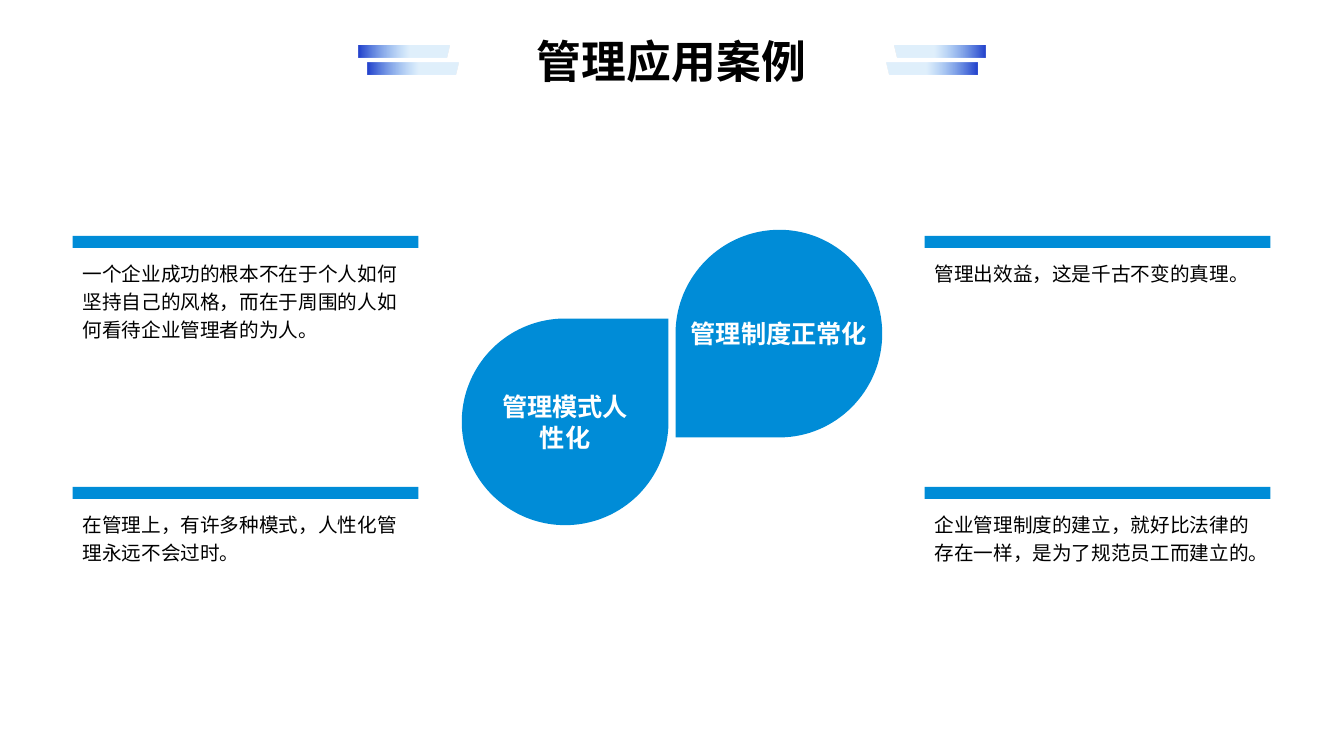
"""Build the management case slide with two drops and four notes."""
from dataclasses import dataclass

from lxml.etree import SubElement
from pptx import Presentation
from pptx.dml.color import RGBColor
from pptx.enum.shapes import MSO_SHAPE as Kind
from pptx.enum.text import MSO_ANCHOR as Anchor, MSO_AUTO_SIZE as Fit, PP_ALIGN as Align
from pptx.oxml.ns import qn
from pptx.shapes.autoshape import Shape
from pptx.shapes.shapetree import SlideShapes as Shapes
from pptx.text.text import TextFrame as Frame
from pptx.util import Inches, Pt

BLUE = RGBColor(0x00, 0x8C, 0xD7)
NAVY = RGBColor(0x21, 0x40, 0xCC)
SKY = RGBColor(0x63, 0xB0, 0xF1)
BLACK = RGBColor(0, 0, 0)
WHITE = RGBColor(255, 255, 255)
BEND = 0.55

Point = tuple[float, float]


@dataclass
class Note:
    left: float
    top: float
    text: str


@dataclass
class Stripe:
    outer: float
    top: float
    way: int


NOTES = [
    Note(0.72, 2.34, "一个企业成功的根本不在于个人如何坚持自己的风格，而在于周围的人如何看待企业管理者的为人。"),
    Note(0.72, 4.83, "在管理上，有许多种模式，人性化管理永远不会过时。"),
    Note(9.17, 2.34, "管理出效益，这是千古不变的真理。"),
    Note(9.17, 4.83, "企业管理制度的建立，就好比法律的存在一样，是为了规范员工而建立的。"),
]
STRIPES = [
    Stripe(3.56, 0.45, 1),
    Stripe(3.65, 0.62, 1),
    Stripe(9.77, 0.45, -1),
    Stripe(9.69, 0.62, -1),
]


def write(frame: Frame, text: str, size: int, color: RGBColor, bold: bool = False,
          align: Align = Align.CENTER, space: float = 1.0) -> None:
    frame.word_wrap = True
    para = frame.paragraphs[0]
    para.alignment = align
    para.line_spacing = space
    run = para.add_run()
    run.text = text
    font = run.font
    font.name, font.size, font.bold = "Arial", Pt(size), bold
    font.color.rgb = color


def paint(shape: Shape) -> None:
    shape.shadow.inherit = False
    shape.fill.solid()
    shape.fill.fore_color.rgb = BLUE
    shape.line.fill.background()


def outline(shapes: Shapes, points: list[Point], close: bool = True) -> Shape:
    spots = [(Inches(x), Inches(y)) for x, y in points]
    form = shapes.build_freeform(*spots[0])
    form.add_line_segments(spots[1:], close=close)
    return form.convert_to_shape()


def toward(start: Point, goal: Point) -> Point:
    return tuple(a + BEND * (b - a) for a, b in zip(start, goal))


def curve(shape: Shape) -> None:
    lines = list(shape._element.iter(qn("a:lnTo")))
    for first, second, third in zip(lines[::3], lines[1::3], lines[2::3]):
        first.tag = qn("a:cubicBezTo")
        for line in (second, third):
            first.append(line[0])
            line.getparent().remove(line)


def label(drop: Shape, text: str) -> None:
    paint(drop)
    drop.text_frame.vertical_anchor = Anchor.MIDDLE
    write(drop.text_frame, text, 18, WHITE, True)


def add_drops(shapes: Shapes) -> None:
    left, mid, right = 6.7, 7.73, 8.75
    top, half, low = 2.28, 3.31, 4.34
    nodes = [(right, half), (mid, low), (left, low), (left, half), (mid, top), (right, half)]
    pulls = [(right, low), (mid, low), (left, low), (left, top), (right, top)]
    points = nodes[:1]
    for start, end, pull in zip(nodes, nodes[1:], pulls):
        points += [toward(start, pull), toward(end, pull), end]
    drop = outline(shapes, points, False)
    curve(drop)
    label(drop, "管理制度正常化")
    tear = shapes.add_shape(Kind.TEAR, Inches(4.58), Inches(3.16), Inches(2.05), Inches(2.05))
    label(tear, "管理模式人性化")


def add_note(shapes: Shapes, note: Note) -> None:
    left, wide = Inches(note.left), Inches(3.43)
    box = shapes.add_textbox(left, Inches(note.top + 0.16), wide, Inches(0.97))
    write(box.text_frame, note.text, 14, BLACK, align=Align.LEFT, space=1.2)
    paint(shapes.add_shape(Kind.RECTANGLE, left, Inches(note.top), wide, Inches(0.12)))


def add_stripe(shapes: Shapes, stripe: Stripe) -> None:
    start, top, low = stripe.outer, stripe.top, stripe.top + 0.12
    end, slant = start + stripe.way * 0.9, start + stripe.way * 0.87
    bar = outline(shapes, [(start, top), (end, top), (slant, low), (start, low)])
    paint(bar)
    bar.fill.gradient()
    bar.fill.gradient_angle = 0 if stripe.way > 0 else 180
    first, last = bar.fill.gradient_stops
    first.position, first.color.rgb = 0, NAVY
    last.position, last.color.rgb = 0.56, SKY
    tint = list(bar.fill._xPr.iter(qn("a:srgbClr")))[-1]
    SubElement(tint, qn("a:alpha"), val="20000")


def main() -> None:
    deck = Presentation()
    deck.slide_width, deck.slide_height = Inches(13.33), Inches(7.5)
    shapes = deck.slides.add_slide(deck.slide_layouts[5]).shapes
    add_drops(shapes)
    for note in NOTES:
        add_note(shapes, note)
    for stripe in STRIPES:
        add_stripe(shapes, stripe)
    title = shapes.title
    title.left, title.top = Inches(4.61), Inches(0.28)
    title.width, title.height = Inches(4.1), Inches(0.63)
    title.text_frame.auto_size = Fit.NONE
    title.text_frame.vertical_anchor = Anchor.TOP
    write(title.text_frame, "管理应用案例", 32, BLACK, True)
    deck.save("out.pptx")


if __name__ == "__main__":
    main()
